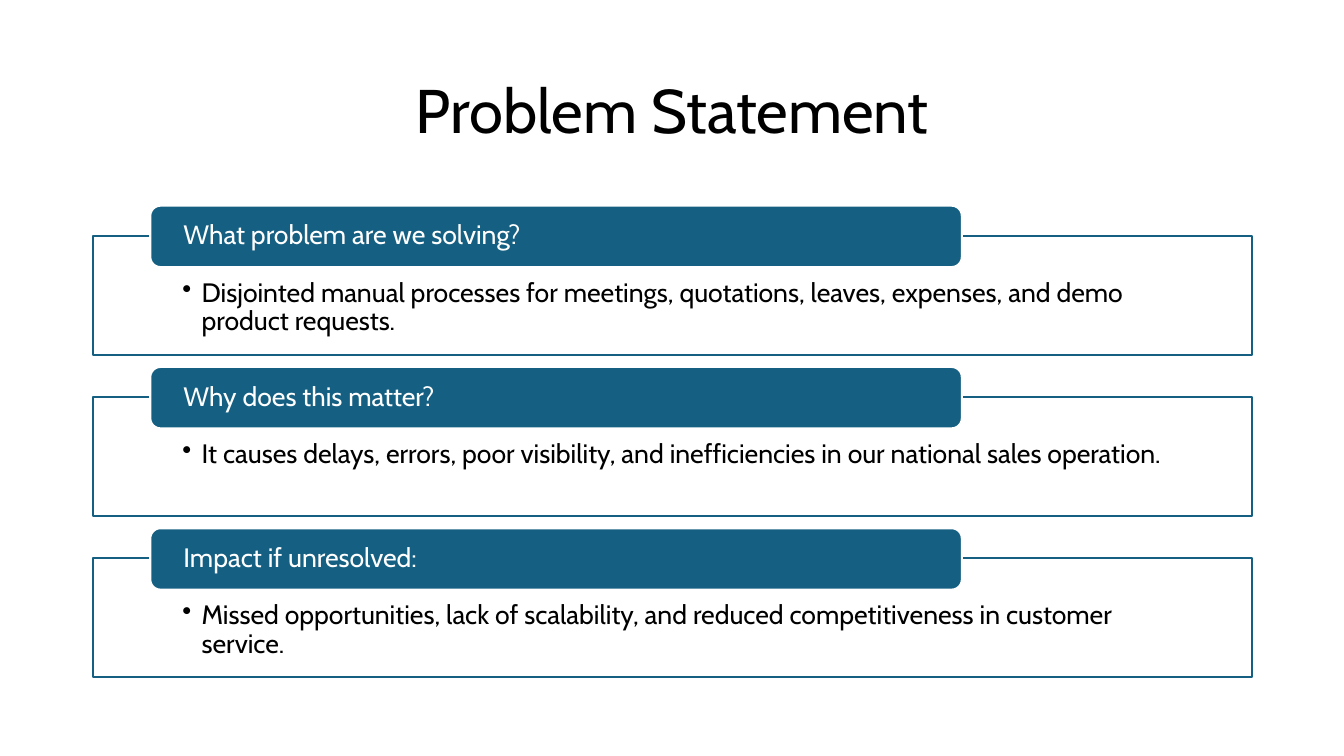
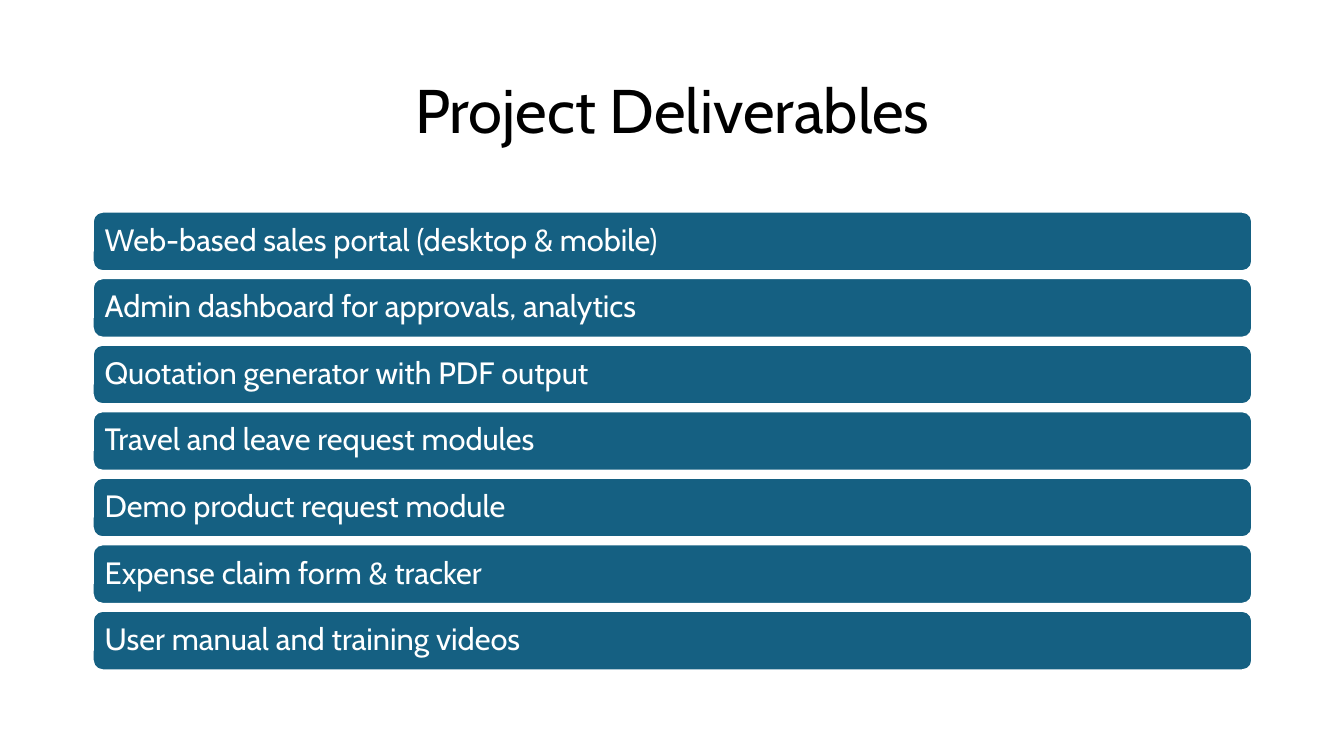
from dataclasses import dataclass

from lxml import etree
from pptx import Presentation
from pptx.dml.color import RGBColor
from pptx.enum.shapes import MSO_SHAPE
from pptx.enum.text import MSO_ANCHOR, PP_ALIGN
from pptx.oxml.ns import qn
from pptx.presentation import Presentation as Deck
from pptx.shapes.autoshape import Shape
from pptx.slide import Slide
from pptx.util import Inches, Pt

RECTANGLE = MSO_SHAPE.RECTANGLE
ROUNDED = MSO_SHAPE.ROUNDED_RECTANGLE
TOP, MIDDLE = MSO_ANCHOR.TOP, MSO_ANCHOR.MIDDLE
LEFT, CENTER = PP_ALIGN.LEFT, PP_ALIGN.CENTER

BLUE = RGBColor(0x15, 0x60, 0x82)
WHITE = RGBColor(0xFF, 0xFF, 0xFF)
BLACK = RGBColor(0x00, 0x00, 0x00)
FONT = "Cabin"

MARGIN = 0.92
CONTENT_WIDTH = 11.5
BULLET_INDENT = 0.19


@dataclass(frozen=True)
class Insets:
    left: float
    top: float
    right: float
    bottom: float


@dataclass(frozen=True)
class TextStyle:
    size: int
    color: RGBColor
    insets: Insets
    anchor: MSO_ANCHOR = MIDDLE
    align: PP_ALIGN = LEFT
    bullet: bool = False


@dataclass(frozen=True)
class BoxStyle:
    outline: MSO_SHAPE
    width: float
    height: float
    fill: RGBColor
    line: RGBColor
    text: TextStyle


@dataclass(frozen=True)
class Section:
    question: str
    answer: str


TITLE = TextStyle(44, BLACK, Insets(0.1, 0.05, 0.1, 0.05), align=CENTER)
ANSWER = BoxStyle(
    RECTANGLE, CONTENT_WIDTH, 1.18, WHITE, BLUE,
    TextStyle(19, BLACK, Insets(0.89, 0.43, 0.89, 0.15), anchor=TOP, bullet=True),
)
QUESTION = BoxStyle(
    ROUNDED, 8.05, 0.61, BLUE, WHITE,
    TextStyle(19, WHITE, Insets(0.3, 0, 0.3, 0)),
)
DELIVERABLE = BoxStyle(
    ROUNDED, CONTENT_WIDTH, 0.59, BLUE, WHITE,
    TextStyle(22, WHITE, Insets(0.09, 0.09, 0.09, 0.09)),
)

SECTION_TOP, SECTION_PITCH = 2.34, 1.6
QUESTION_LEFT, QUESTION_RISE = 1.49, 0.3
DELIVERABLE_TOP, DELIVERABLE_PITCH = 2.1, 0.66

SECTIONS = [
    Section(
        "What problem are we solving?",
        "Disjointed manual processes for meetings, quotations, leaves, expenses, "
        "and demo product requests.",
    ),
    Section(
        "Why does this matter?",
        "It causes delays, errors, poor visibility, and inefficiencies in our "
        "national sales operation.",
    ),
    Section(
        "Impact if unresolved:",
        "Missed opportunities, lack of scalability, and reduced competitiveness "
        "in customer service.",
    ),
]

DELIVERABLES = [
    "Web-based sales portal (desktop & mobile)",
    "Admin dashboard for approvals, analytics",
    "Quotation generator with PDF output",
    "Travel and leave request modules",
    "Demo product request module",
    "Expense claim form & tracker",
    "User manual and training videos",
]


def write_text(box: Shape, text: str, style: TextStyle) -> None:
    frame = box.text_frame
    frame.text = text
    frame.word_wrap = True
    frame.vertical_anchor = style.anchor
    frame.margin_left = Inches(style.insets.left)
    frame.margin_top = Inches(style.insets.top)
    frame.margin_right = Inches(style.insets.right)
    frame.margin_bottom = Inches(style.insets.bottom)
    para = frame.paragraphs[0]
    if style.bullet:
        properties = para._p.get_or_add_pPr()
        properties.set("marL", str(Inches(BULLET_INDENT)))
        properties.set("indent", str(-Inches(BULLET_INDENT)))
        etree.SubElement(properties, qn("a:buChar")).set("char", "•")
    para.alignment = style.align
    para.line_spacing = 0.9
    for span in para.runs:
        span.font.name = FONT
        span.font.size = Pt(style.size)
        span.font.color.rgb = style.color


def add_box(page: Slide, left: float, top: float, text: str, style: BoxStyle) -> None:
    box = page.shapes.add_shape(
        style.outline, Inches(left), Inches(top), Inches(style.width), Inches(style.height)
    )
    box.shadow.inherit = False
    box.fill.solid()
    box.fill.fore_color.rgb = style.fill
    box.line.color.rgb = style.line
    box.line.width = Pt(1.5)
    write_text(box, text, style.text)


def add_page(deck: Deck, title: str) -> Slide:
    page = deck.slides.add_slide(deck.slide_layouts[6])
    box = page.shapes.add_textbox(
        Inches(MARGIN), Inches(0.4), Inches(CONTENT_WIDTH), Inches(1.45)
    )
    write_text(box, title, TITLE)
    return page


def add_problem_page(deck: Deck) -> None:
    page = add_page(deck, "Problem Statement")
    for index, section in enumerate(SECTIONS):
        top = SECTION_TOP + index * SECTION_PITCH
        add_box(page, MARGIN, top, section.answer, ANSWER)
        add_box(page, QUESTION_LEFT, top - QUESTION_RISE, section.question, QUESTION)


def add_deliverables_page(deck: Deck) -> None:
    page = add_page(deck, "Project Deliverables")
    for index, deliverable in enumerate(DELIVERABLES):
        top = DELIVERABLE_TOP + index * DELIVERABLE_PITCH
        add_box(page, MARGIN, top, deliverable, DELIVERABLE)


def main() -> None:
    deck = Presentation()
    deck.slide_width = Inches(13.33)
    deck.slide_height = Inches(7.5)
    add_problem_page(deck)
    add_deliverables_page(deck)
    deck.save("out.pptx")


if __name__ == "__main__":
    main()
